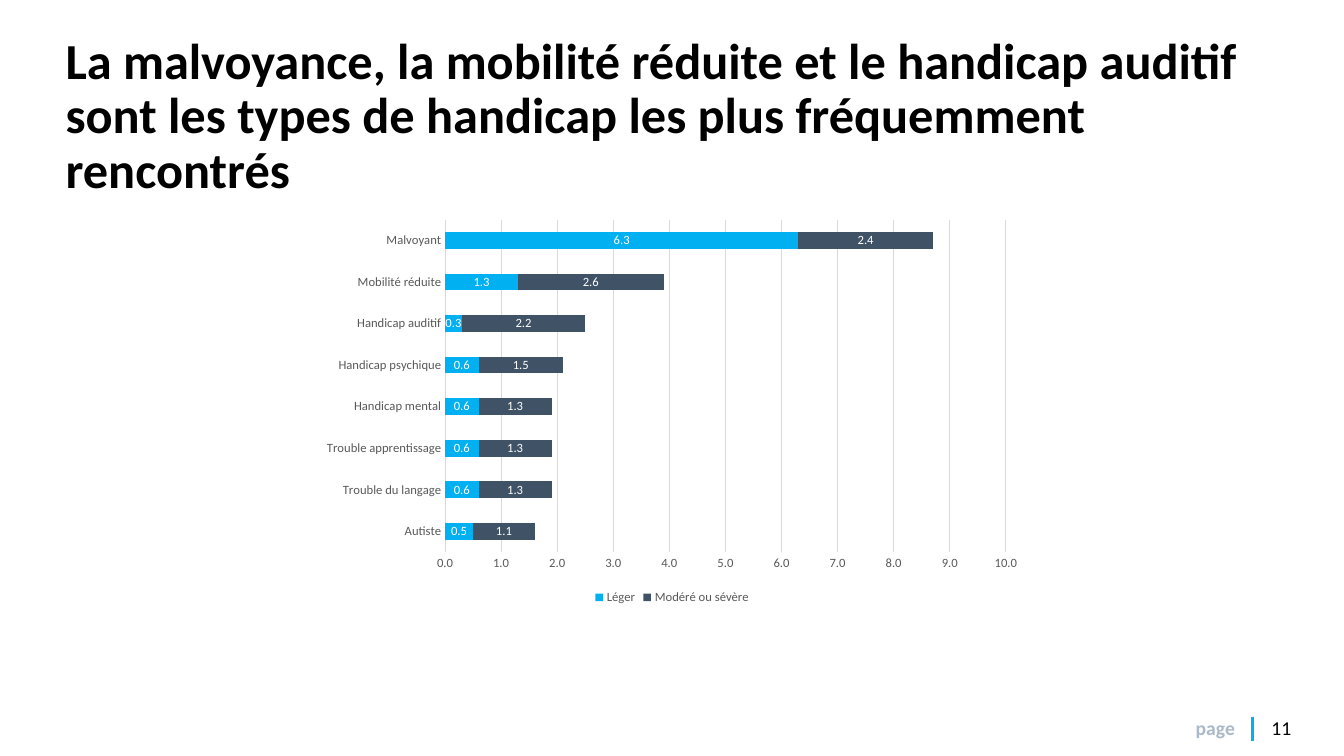
from dataclasses import dataclass

from lxml.etree import SubElement
from pptx import Presentation
from pptx.chart.data import CategoryChartData
from pptx.dml.color import RGBColor
from pptx.enum.chart import XL_CHART_TYPE, XL_LABEL_POSITION, XL_LEGEND_POSITION, XL_TICK_MARK
from pptx.enum.shapes import MSO_CONNECTOR
from pptx.enum.text import MSO_ANCHOR, MSO_AUTO_SIZE, PP_ALIGN
from pptx.oxml.ns import qn
from pptx.util import Emu, Pt

FONT = "Calibri"
BLACK, WHITE, GREY, RULE = "000000", "FFFFFF", "595959", "D9D9D9"
BLUE, SLATE, PALE = "00B0F0", "405265", "ABBAC9"


@dataclass(frozen=True)
class Series:
    name: str
    values: tuple[float, ...]
    color: str


@dataclass(frozen=True)
class Label:
    text: str
    left: int
    width: int
    color: str
    bold: bool


CATEGORIES = (
    "Autiste", "Trouble du langage", "Trouble apprentissage", "Handicap mental",
    "Handicap psychique", "Handicap auditif", "Mobilité réduite", "Malvoyant",
)
SERIES = (
    Series("Léger", (0.5, 0.6, 0.6, 0.6, 0.6, 0.3, 1.3, 6.3), BLUE),
    Series("Modéré ou sévère", (1.1, 1.3, 1.3, 1.3, 1.5, 2.2, 2.6, 2.4), SLATE),
)
FOOTER = (
    Label("page", 1186, 50, PALE, True),
    Label("11", 1261, 40, BLACK, False),
)


def px(n: int) -> Emu:
    """Convert px to EMU, at 100 px to the inch."""
    return Emu(n * 9144)


def rgb(color: str) -> RGBColor:
    return RGBColor.from_string(color)


def style_font(font, size: int, color: str, bold: bool = False) -> None:
    font.name, font.size, font.bold = FONT, Pt(size), bold
    font.color.rgb = rgb(color)


def style_line(line, color: str, width: float) -> None:
    line.color.rgb = rgb(color)
    line.width = Pt(width)


def clear_margins(tf) -> None:
    tf.margin_left = tf.margin_right = tf.margin_top = tf.margin_bottom = 0


def add_title(s, text: str) -> None:
    sp = s.shapes.title
    sp.left, sp.top, sp.width, sp.height = px(65), px(36), px(1213), px(161)
    tf = sp.text_frame
    clear_margins(tf)
    tf.word_wrap = True
    tf.auto_size = MSO_AUTO_SIZE.NONE
    tf.vertical_anchor = MSO_ANCHOR.MIDDLE
    p = tf.paragraphs[0]
    p.alignment = PP_ALIGN.LEFT
    p.line_spacing = 0.9
    r = p.add_run()
    r.text = text
    style_font(r.font, 36, BLACK, True)


def add_label(s, label: Label) -> None:
    sp = s.shapes.add_textbox(px(label.left), px(710), px(label.width), px(24))
    tf = sp.text_frame
    clear_margins(tf)
    tf.word_wrap = True
    r = tf.paragraphs[0].add_run()
    r.text = label.text
    style_font(r.font, 14, label.color, label.bold)


def add_divider(s) -> None:
    line = s.shapes.add_connector(MSO_CONNECTOR.STRAIGHT, px(1242), px(711), px(1242), px(735))
    style_line(line.line, BLUE, 2.25)
    SubElement(line._element.spPr, qn("a:effectLst"))


def add_chart(s) -> None:
    data = CategoryChartData(number_format="0.0")
    data.categories = CATEGORIES
    for series in SERIES:
        data.add_series(series.name, series.values)
    chart = s.shapes.add_chart(
        XL_CHART_TYPE.BAR_STACKED, px(310), px(210), px(713), px(394), data
    ).chart
    style_font(chart.font, 10, BLACK)
    chart.has_title = False
    chart.has_legend = True
    chart.legend.position = XL_LEGEND_POSITION.BOTTOM
    chart.legend.include_in_layout = False
    style_font(chart.legend.font, 9, GREY)

    for axis in (chart.category_axis, chart.value_axis):
        axis.major_tick_mark = axis.minor_tick_mark = XL_TICK_MARK.NONE
        style_font(axis.tick_labels.font, 9, GREY)
    style_line(chart.category_axis.format.line, RULE, 0.75)
    values = chart.value_axis
    values.minimum_scale, values.maximum_scale, values.major_unit = 0, 10, 1
    values.format.line.fill.background()
    values.has_major_gridlines = True
    style_line(values.major_gridlines.format.line, RULE, 0.75)
    values.tick_labels.number_format = "0.0"
    values.tick_labels.number_format_is_linked = False

    plot = chart.plots[0]
    plot.gap_width, plot.overlap = 150, 100
    plot.vary_by_categories = False
    for bars, series in zip(plot.series, SERIES):
        bars.format.fill.solid()
        bars.format.fill.fore_color.rgb = rgb(series.color)
        bars.invert_if_negative = False
        labels = bars.data_labels
        labels.show_value = True
        labels.number_format = "0.0"
        labels.number_format_is_linked = False
        labels.position = XL_LABEL_POSITION.CENTER
        style_font(labels.font, 9, WHITE)


def main() -> None:
    prs = Presentation()
    prs.slide_width, prs.slide_height = px(1333), px(750)
    s = prs.slides.add_slide(prs.slide_layouts[5])
    s.background.fill.solid()
    s.background.fill.fore_color.rgb = rgb(WHITE)
    for label in FOOTER:
        add_label(s, label)
    add_divider(s)
    add_title(
        s,
        "La malvoyance, la mobilité réduite et le handicap auditif sont "
        "les types de handicap les plus fréquemment rencontrés",
    )
    add_chart(s)
    prs.save("out.pptx")


if __name__ == "__main__":
    main()
